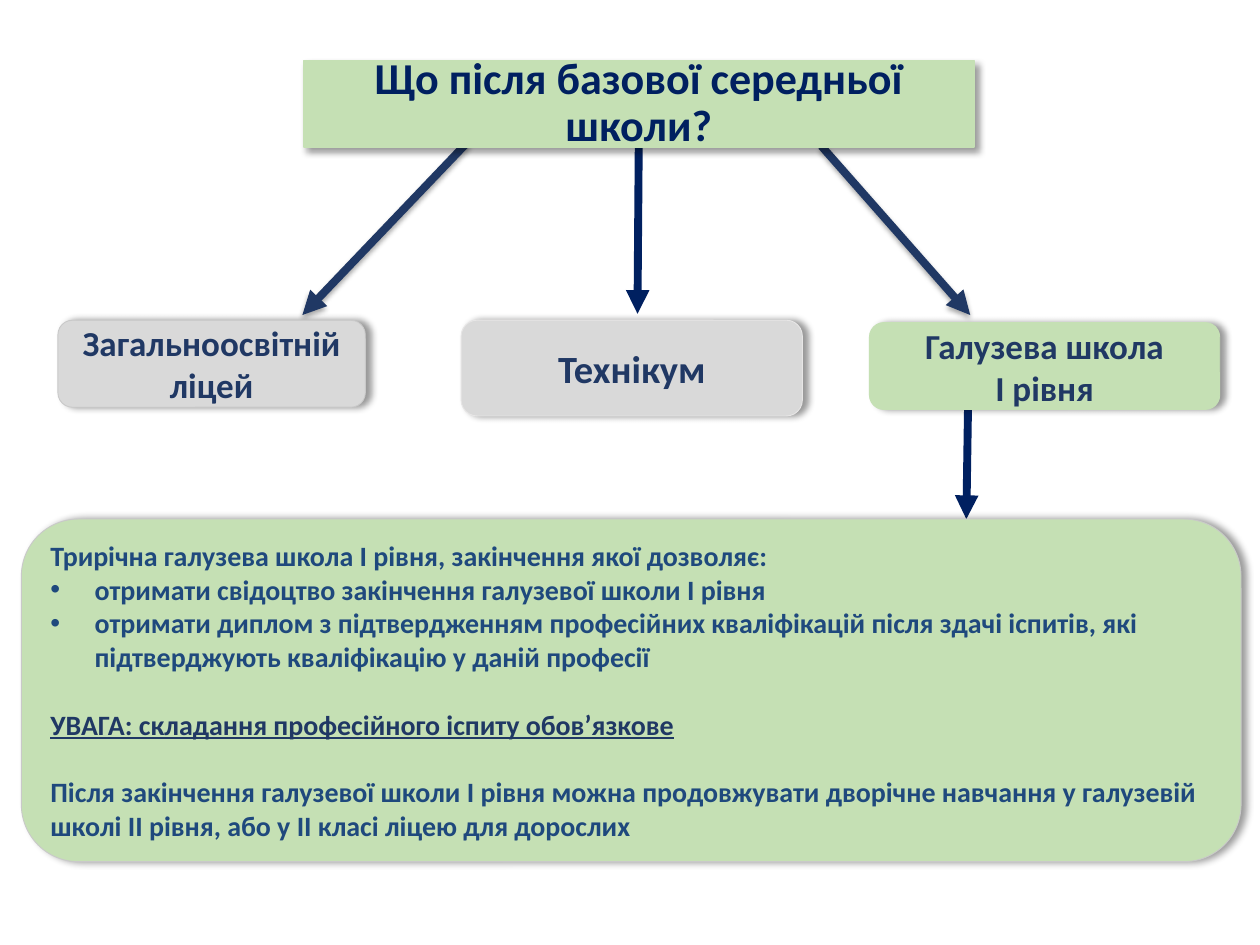
"""Builds a one-slide chart of the school paths after basic secondary school."""
from lxml import etree
from pptx import Presentation
from pptx import util as u
from pptx.dml.color import RGBColor
from pptx.enum import shapes, text
from pptx.oxml import ns

COLORS = {"green": "C5E0B4", "grey": "D9D9D9", "edge": "C9C9C9", "pale": "E7E6E6",
          "navy": "002060", "slate": "203864", "blue": "1F497D", "black": "000000"}
FONT = "Calibri"
BULLET_INDENT = 25.2
LINE_GAP = 19.5

TITLE = ("Що після базової середньої школи?", (173.5, 34.5, 383, 49.7))
SCHOOLS = [
    (["Технікум"], (263.5, 183, 195, 54.7), "grey", "pale", 22),
    (["Галузева школа", "І рівня"], (496.8, 184.3, 200.2, 49.7), "green", "green", 20),
    (["Загальноосвітній ліцей"], (33.1, 183, 175.7, 49.7), "grey", "edge", 20),
]
DETAILS_BOX = (12.2, 296.6, 697, 195.8)
DETAILS = [  # text, colour, bulleted, underlined, space before
    ("Трирічна галузева школа І рівня, закінчення якої дозволяє:", "blue", False, False, 0),
    ("отримати свідоцтво закінчення галузевої школи І рівня", "blue", True, False, 0),
    ("отримати диплом з підтвердженням професійних кваліфікацій після здачі іспитів, "
     "які підтверджують кваліфікацію у даній професії", "blue", True, False, 0),
    ("УВАГА: складання професійного іспиту обов’язкове", "slate", False, True, LINE_GAP),
    ("Після закінчення галузевої школи І рівня можна продовжувати дворічне навчання "
     "у галузевій школі ІІ рівня, або у ІІ класі ліцею для дорослих",
     "blue", False, False, LINE_GAP),
]
ARROWS = [
    ((553.7, 196.6), (552.2, 296.6), "navy", False),
    ((469.4, 83.5), (554.4, 180), "slate", True),
    ((267.1, 81.4), (172.8, 180), "slate", True),
]
TITLE_ARROW_END = (364.3, 179.3)


def color(name):
    return RGBColor.from_string(COLORS[name])


def add_child(parent, tag, **attributes):
    values = {key: str(value) for key, value in attributes.items()}
    return etree.SubElement(parent, ns.qn(tag), values)


def add_shadow(properties, alpha, blur, distance, angle):
    for old in properties.findall(ns.qn("a:effectLst")):
        properties.remove(old)
    shadow = add_child(add_child(properties, "a:effectLst"), "a:outerShdw",
                       blurRad=u.Pt(blur), dist=u.Pt(distance), dir=angle * 60000,
                       algn="tl", rotWithShape=0)
    shade = add_child(shadow, "a:srgbClr", val=COLORS["black"])
    add_child(shade, "a:alpha", val=alpha * 1000)


def format_box(shape, fill, line, width, angle):
    shape.fill.solid()
    shape.fill.fore_color.rgb = color(fill)
    shape.line.color.rgb = color(line)
    shape.line.width = u.Pt(width)
    add_shadow(shape._element.spPr, 40, 4, 3, angle)
    shape.text_frame.word_wrap = True
    shape.text_frame.auto_size = text.MSO_AUTO_SIZE.NONE
    shape.text_frame.vertical_anchor = text.MSO_ANCHOR.MIDDLE


def add_box(slide, box, fill, line):
    shape = slide.shapes.add_shape(shapes.MSO_SHAPE.ROUNDED_RECTANGLE, *map(u.Pt, box))
    format_box(shape, fill, line, 0.5, 0)
    return shape


def format_paragraph(paragraph, size, ink, alignment=text.PP_ALIGN.CENTER):
    paragraph.alignment = alignment
    font = paragraph.font
    font.name, font.size, font.bold = FONT, u.Pt(size), True
    font.color.rgb = color(ink)


def add_bullet(paragraph):
    properties = paragraph._p.get_or_add_pPr()
    properties.set("marL", str(u.Pt(BULLET_INDENT)))
    properties.set("indent", str(-u.Pt(BULLET_INDENT)))
    add_child(properties, "a:buFont", typeface="Arial")
    add_child(properties, "a:buChar", char="•")


def add_arrow(slide, start, end, ink, shadowed):
    arrow = slide.shapes.add_connector(shapes.MSO_CONNECTOR.STRAIGHT,
                                       *map(u.Pt, start + end))
    arrow.line.color.rgb = color(ink)
    arrow.line.width = u.Pt(4.5)
    add_child(arrow.line._get_or_add_ln(), "a:tailEnd", type="triangle")
    if shadowed:
        add_shadow(arrow._element.spPr, 35, 3.1, 1.8, 90)
    else:
        add_child(arrow._element.spPr, "a:effectLst")
    return arrow


def add_title(slide):
    title = slide.shapes.title
    wording, box = TITLE
    title.left, title.top, title.width, title.height = map(u.Pt, box)
    format_box(title, "green", "green", 1, 45)
    title.text_frame.text = wording
    paragraph = title.text_frame.paragraphs[0]
    paragraph.line_spacing = 0.9
    format_paragraph(paragraph, 25.2, "navy")
    return title


def add_details(slide):
    frame = add_box(slide, DETAILS_BOX, "green", "edge").text_frame
    frame.text = "\n".join(row[0] for row in DETAILS)
    for paragraph, (_, ink, bulleted, underlined, gap) in zip(frame.paragraphs, DETAILS):
        paragraph.space_before = u.Pt(gap)
        if bulleted:
            add_bullet(paragraph)
        format_paragraph(paragraph, 16, ink, text.PP_ALIGN.LEFT)
        paragraph.font.underline = underlined


def main():
    presentation = Presentation()
    presentation.slide_width, presentation.slide_height = u.Pt(720), u.Pt(540)
    slide = presentation.slides.add_slide(presentation.slide_layouts[5])
    for arrow in ARROWS:
        add_arrow(slide, *arrow)
    for lines, box, fill, line, size in SCHOOLS:
        frame = add_box(slide, box, fill, line).text_frame
        frame.text = "\n".join(lines)
        for paragraph in frame.paragraphs:
            format_paragraph(paragraph, size, "slate")
    add_details(slide)
    title = add_title(slide)
    middle_arrow = add_arrow(slide, TITLE_ARROW_END, TITLE_ARROW_END, "navy", False)
    middle_arrow.begin_connect(title, 2)
    slide.shapes._spTree.append(title._element)
    presentation.save("out.pptx")


if __name__ == "__main__":
    main()
